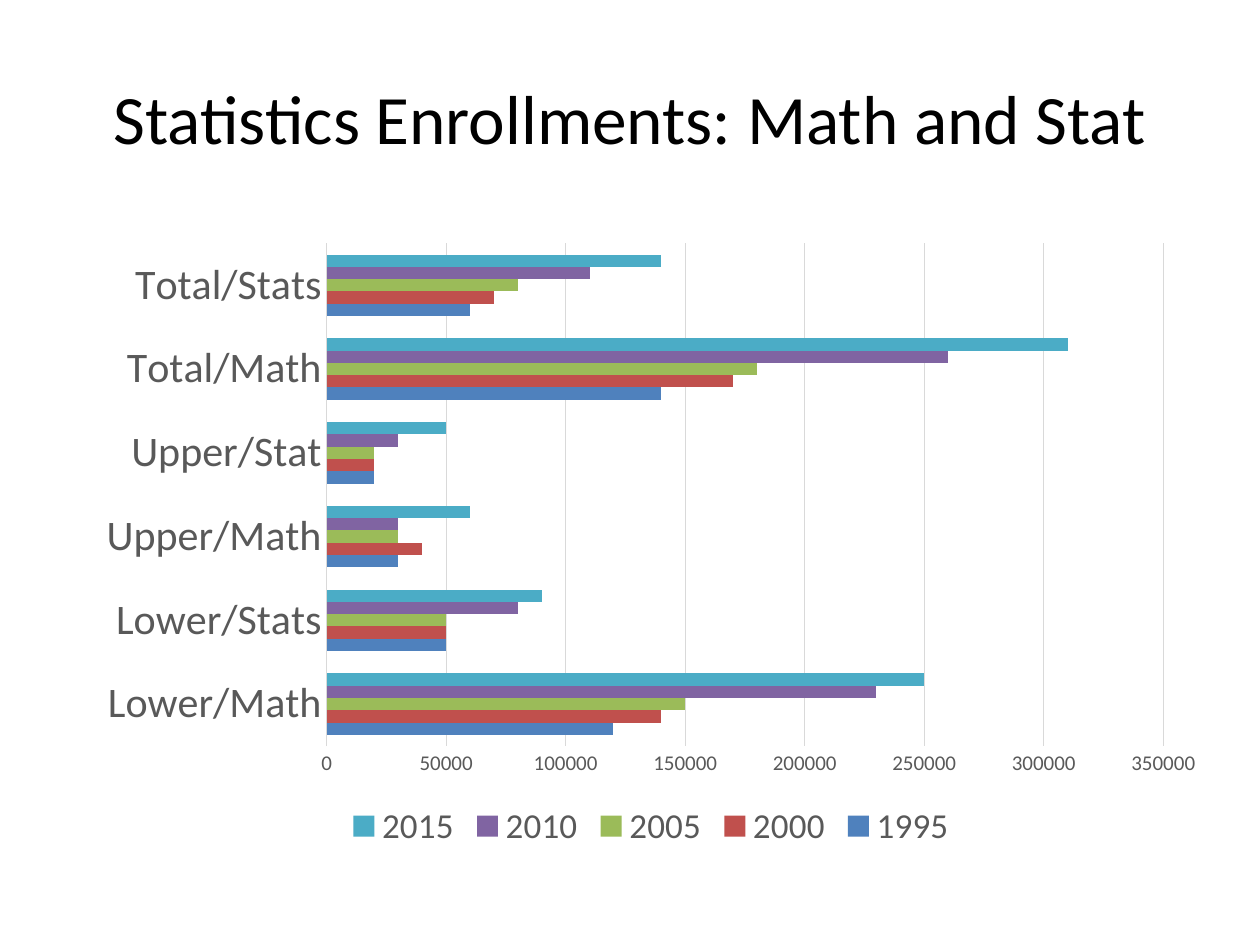
from pptx import Presentation
from pptx import util as u
from pptx.chart.data import CategoryChartData
from pptx.dml.color import RGBColor
from pptx.enum import chart as c, text

PX = 914400 / 126
FONT = "Calibri"
COLORS = {
    "title": "000000",
    "label": "595959",
    "rule": "D9D9D9",
    "1995": "4F81BD",
    "2000": "C0504D",
    "2005": "9BBB59",
    "2010": "8064A2",
    "2015": "4BACC6",
}
COURSES = ["Lower/Math", "Lower/Stats", "Upper/Math",
           "Upper/Stat", "Total/Math", "Total/Stats"]
ENROLLMENTS = {
    "1995": [120000, 50000, 30000, 20000, 140000, 60000],
    "2000": [140000, 50000, 40000, 20000, 170000, 70000],
    "2005": [150000, 50000, 30000, 20000, 180000, 80000],
    "2010": [230000, 80000, 30000, 30000, 260000, 110000],
    "2015": [250000, 90000, 60000, 50000, 310000, 140000],
}


def px(length):
    return u.Emu(round(length * PX))


def color(name):
    return RGBColor.from_string(COLORS[name])


def style_font(font, size, name):
    font.name = FONT
    font.size = u.Pt(size)
    font.bold = False
    font.color.rgb = color(name)


def style_line(line, name):
    line.color.rgb = color(name)
    line.width = u.Pt(0.75)


def add_title(page, box, wording):
    title = page.shapes.title
    title.left, title.top, title.width, title.height = map(px, box)
    frame = title.text_frame
    frame.text = wording
    frame.word_wrap = True
    frame.auto_size = text.MSO_AUTO_SIZE.NONE
    frame.vertical_anchor = text.MSO_ANCHOR.MIDDLE
    para = frame.paragraphs[0]
    para.alignment = text.PP_ALIGN.CENTER
    style_font(para.font, 39.6, "title")


def add_enrollment_chart(page, box):
    data = CategoryChartData()
    data.categories = COURSES
    for year, counts in ENROLLMENTS.items():
        data.add_series(year, counts)
    chart = page.shapes.add_chart(
        c.XL_CHART_TYPE.BAR_CLUSTERED, *map(px, box), data).chart
    chart.has_title = False
    style_font(chart.font, 10, "title")

    plot = chart.plots[0]
    plot.gap_width = 182
    plot.overlap = 0
    plot.vary_by_categories = False
    for series in plot.series:
        series.format.fill.solid()
        series.format.fill.fore_color.rgb = color(series.name)

    for axis, size in ((chart.category_axis, 24), (chart.value_axis, 12)):
        axis.major_tick_mark = c.XL_TICK_MARK.NONE
        axis.minor_tick_mark = c.XL_TICK_MARK.NONE
        style_font(axis.tick_labels.font, size, "label")
    style_line(chart.category_axis.format.line, "rule")

    values = chart.value_axis
    values.minimum_scale = 0
    values.maximum_scale = 350000
    values.major_unit = 50000
    values.format.line.fill.background()
    values.has_major_gridlines = True
    style_line(values.major_gridlines.format.line, "rule")

    chart.has_legend = True
    chart.legend.position = c.XL_LEGEND_POSITION.BOTTOM
    chart.legend.include_in_layout = False
    style_font(chart.legend.font, 20, "label")


def main():
    deck = Presentation()
    deck.slide_width, deck.slide_height = px(1260), px(945)
    page = deck.slides.add_slide(deck.slide_layouts[5])
    add_title(page, (63, 38, 1134, 158), "Statistics Enrollments: Math and Stat")
    add_enrollment_chart(page, (84, 231, 1134, 624))
    deck.save("out.pptx")


if __name__ == "__main__":
    main()
